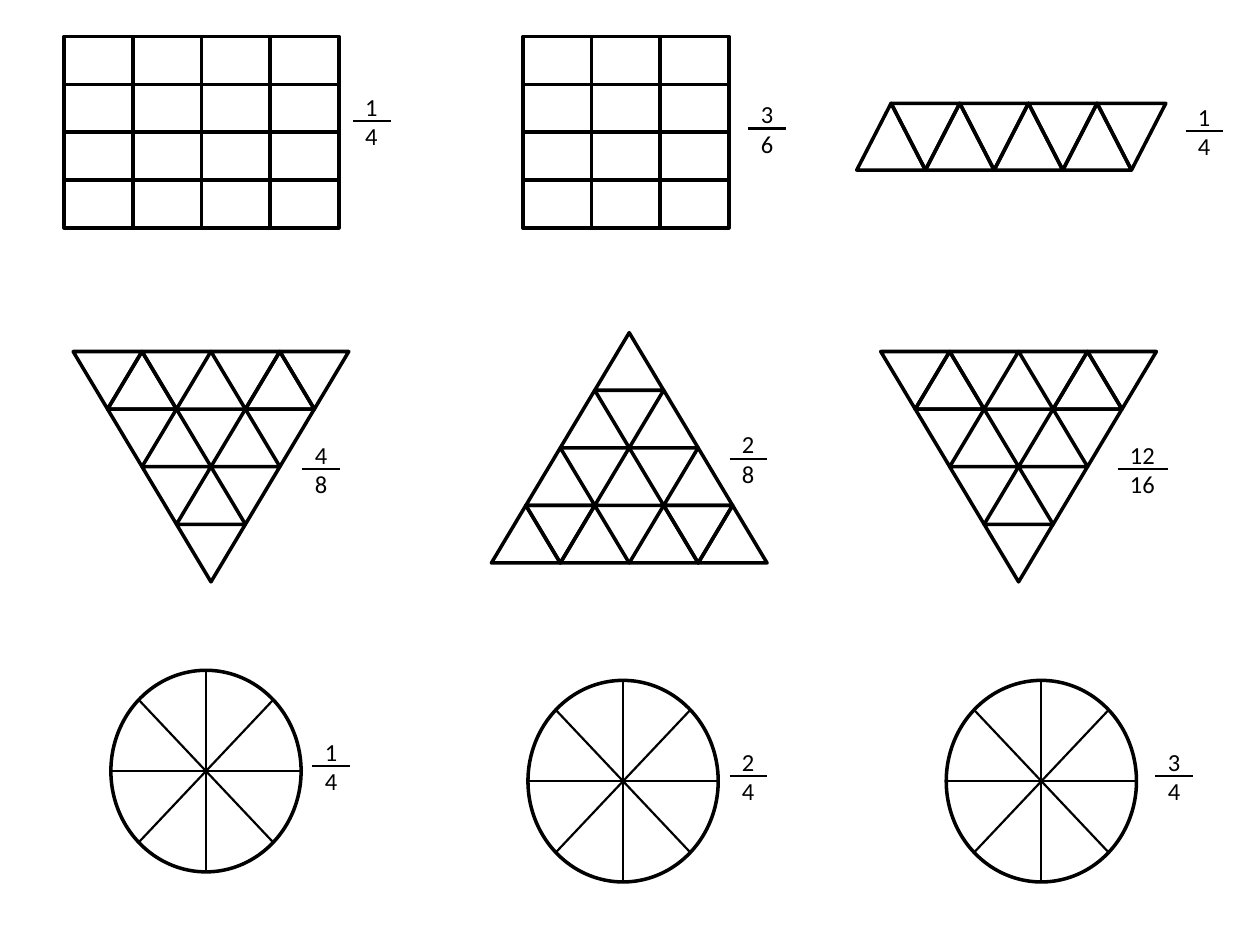
from lxml.etree import SubElement
from math import cos, pi, sin
from pptx import Presentation
from pptx.dml.color import RGBColor
from pptx.enum.shapes import MSO_CONNECTOR, MSO_SHAPE
from pptx.enum.text import MSO_AUTO_SIZE
from pptx.oxml.ns import qn
from pptx.util import Inches, Pt

COLUMNS, ROWS = 100, 75
BLANK_LAYOUT = 6


def colour(hex_value):
    return RGBColor.from_string(hex_value)


def write(frame, lines, size=14, font="Calibri", ink="000000"):
    frame.word_wrap = False
    frame.auto_size = MSO_AUTO_SIZE.SHAPE_TO_FIT_TEXT
    for index, line in enumerate(lines):
        paragraph = frame.paragraphs[0] if index == 0 else frame.add_paragraph()
        run = paragraph.add_run()
        run.text = line
        run.font.size = Pt(size)
        run.font.name = font
        run.font.color.rgb = colour(ink)


class Worksheet:
    ink = "000000"
    outline = 2
    thin = 1.25

    def __init__(self, presentation):
        self.slide = presentation.slides.add_slide(
            presentation.slide_layouts[BLANK_LAYOUT])
        self.column = presentation.slide_width / COLUMNS
        self.row = presentation.slide_height / ROWS

    def place(self, *lengths):
        units = (self.column, self.row) * 2
        return [round(length * unit) for length, unit in zip(lengths, units)]

    def group(self):
        return self.slide.shapes.add_group_shape().shapes

    def stroke(self, item, width):
        item.line.color.rgb = colour(self.ink)
        item.line.width = Pt(width)

    def cell(self, shapes, preset, left, top, width, height, flipped=False):
        item = shapes.add_shape(preset, *self.place(left, top, width, height))
        item.shadow.inherit = False
        item.fill.background()
        item.rotation = 180 if flipped else 0
        self.stroke(item, self.outline)

    def line(self, shapes, *ends):
        item = shapes.add_connector(MSO_CONNECTOR.STRAIGHT, *self.place(*ends))
        self.stroke(item, self.thin)
        SubElement(item._element.spPr, qn("a:effectLst"))

    def rectangle(self, left, top, across, down, width=5.45, height=3.8):
        shapes = self.group()
        for i in range(across):
            for j in range(down):
                self.cell(shapes, MSO_SHAPE.RECTANGLE, left + i * width,
                          top + j * height, width, height)

    def strip(self, left, top, count, width=5.45, height=5.3):
        shapes = self.group()
        for i in range(count):
            self.cell(shapes, MSO_SHAPE.ISOSCELES_TRIANGLE,
                      left + i * width / 2, top, width, height, i % 2 == 1)

    def triangle(self, left, top, pointing_down, size=4, width=5.47, height=4.57):
        shapes = self.group()
        for level in range(size):
            y = top + height * (level if pointing_down else size - 1 - level)
            for i in range(size - level):
                x = left + (i + level / 2) * width
                self.cell(shapes, MSO_SHAPE.ISOSCELES_TRIANGLE,
                          x, y, width, height, pointing_down)
        base = top if pointing_down else top + (size - 1) * height
        for gap in range(0, size, 2):
            self.cell(shapes, MSO_SHAPE.ISOSCELES_TRIANGLE,
                      left + (gap + 0.5) * width, base, width, height,
                      not pointing_down)

    def circle(self, left, top, width=15.1, height=16, sectors=8):
        shapes = self.group()
        self.cell(shapes, MSO_SHAPE.OVAL, left, top, width, height)
        x, y = left + width / 2, top + height / 2
        for i in range(sectors // 2):
            angle = 2 * pi * i / sectors
            dx, dy = width / 2 * cos(angle), height / 2 * sin(angle)
            self.line(shapes, x - dx, y - dy, x + dx, y + dy)

    def fraction(self, left, top, numerator, denominator):
        shapes = self.group()
        width = 2 + max(len(numerator), len(denominator))
        box = shapes.add_textbox(*self.place(left, top, width, 5.7))
        write(box.text_frame, (numerator, denominator), ink=self.ink)
        bar = top + 2.8
        self.line(shapes, left, bar, left + width, bar)


def main():
    presentation = Presentation()
    presentation.slide_width = Inches(10)
    presentation.slide_height = Inches(7.5)
    sheet = Worksheet(presentation)

    sheet.rectangle(5.1, 2.9, across=4, down=4)
    sheet.rectangle(41.5, 2.9, across=3, down=4)
    sheet.strip(68, 8.2, count=8)

    for left, top, pointing_down in ((5.8, 27.9, True), (39, 26.4, False),
                                     (69.9, 27.9, True)):
        sheet.triangle(left, top, pointing_down)

    for left, top in ((8.8, 53.2), (41.9, 54), (75.1, 54)):
        sheet.circle(left, top)

    for left, top, numerator, denominator in (
            (28, 6.8, "1", "4"), (59.4, 7.4, "3", "6"), (94.1, 7.6, "1", "4"),
            (24, 34.4, "4", "8"), (57.9, 33.6, "2", "8"), (88.7, 34.4, "12", "16"),
            (24.8, 58, "1", "4"), (57.9, 58.8, "2", "4"), (91.7, 58.8, "3", "4")):
        sheet.fraction(left, top, numerator, denominator)

    presentation.save("out.pptx")


if __name__ == "__main__":
    main()
